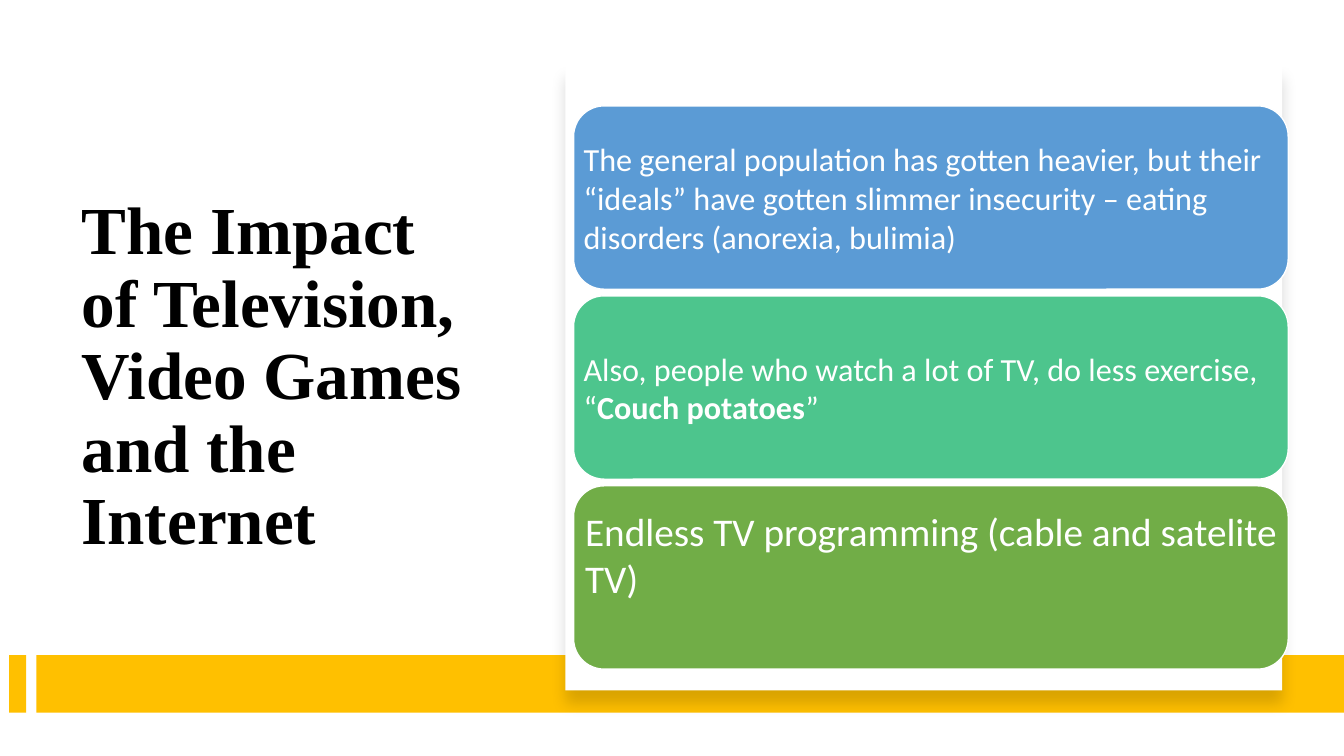
from lxml.etree import SubElement
from pptx import Presentation
from pptx.dml.color import RGBColor
from pptx.enum.shapes import MSO_SHAPE
from pptx.enum.text import MSO_ANCHOR, MSO_AUTO_SIZE, PP_ALIGN
from pptx.oxml.ns import qn
from pptx.util import Pt

BLACK = RGBColor(0x00, 0x00, 0x00)
WHITE = RGBColor(0xFF, 0xFF, 0xFF)
AMBER = RGBColor(0xFF, 0xC0, 0x00)
BLUE = RGBColor(0x5B, 0x9B, 0xD5)
TEAL = RGBColor(0x4D, 0xC5, 0x8D)
GREEN = RGBColor(0x71, 0xAD, 0x47)

BAR_TOP, BAR_HEIGHT = 468, 41
CARD_LEFT, CARD_TOP = 409.7, 75.6
CARD_WIDTH, CARD_HEIGHT = 510.5, 131
CARD_STEP = 135.7

# Fill, text size, side inset, bottom inset, runs of (text, bold)
CARDS = [
    (BLUE, 23, 0.8, 0.8, [
        ("The general population has gotten heavier, but their “ideals” have "
         "gotten slimmer insecurity – eating disorders (anorexia, bulimia)", False),
    ]),
    (TEAL, 23, 0.8, 0.8, [
        ("Also, people who watch a lot of TV, do less exercise, “", False),
        ("Couch potatoes", True),
        ("”", False),
    ]),
    (GREEN, 28, 1.9, 35.5, [
        ("Endless TV programming (cable and satelite TV)", False),
    ]),
]


def add_run(paragraph, text, font_name, size, color, bold):
    run = paragraph.add_run()
    run.text = text
    run.font.name = font_name
    run.font.size = Pt(size)
    run.font.color.rgb = color
    run.font.bold = bold


def add_title(slide, text):
    title = slide.shapes.title
    title.left, title.top = Pt(51), Pt(86.4)
    title.width, title.height = Pt(298.8), Pt(367.2)
    frame = title.text_frame
    frame.word_wrap = True
    frame.auto_size = MSO_AUTO_SIZE.NONE
    frame.vertical_anchor = MSO_ANCHOR.MIDDLE
    paragraph = frame.paragraphs[0]
    paragraph.alignment = PP_ALIGN.LEFT
    paragraph.line_spacing = 0.9
    add_run(paragraph, text, "Times New Roman", 48, BLACK, True)


def add_block(slide, kind, left, top, width, height, fill):
    """Add a filled shape without outline or shadow."""
    shape = slide.shapes.add_shape(kind, Pt(left), Pt(top), Pt(width), Pt(height))
    shape.shadow.inherit = False
    shape.fill.solid()
    shape.fill.fore_color.rgb = fill
    shape.line.fill.background()
    return shape


def add_soft_shadow(shape):
    effects = shape.element.spPr.find(qn("a:effectLst"))
    shadow = SubElement(effects, qn("a:outerShdw"), blurRad=str(Pt(11)),
                        dist=str(Pt(10)), dir="5400000", algn="t", rotWithShape="0")
    color = SubElement(shadow, qn("a:srgbClr"), val=str(BLACK))
    SubElement(color, qn("a:alpha"), val="15000")


def add_card(slide, top, fill, size, side_inset, bottom_inset, runs):
    card = add_block(slide, MSO_SHAPE.ROUNDED_RECTANGLE, CARD_LEFT, top,
                     CARD_WIDTH, CARD_HEIGHT, fill)
    card.line.color.rgb = WHITE
    card.line.width = Pt(1)
    frame = card.text_frame
    frame.word_wrap = True
    frame.vertical_anchor = MSO_ANCHOR.MIDDLE
    frame.margin_left = frame.margin_right = frame.margin_top = Pt(side_inset)
    frame.margin_bottom = Pt(bottom_inset)
    paragraph = frame.paragraphs[0]
    paragraph.alignment = PP_ALIGN.LEFT
    for text, bold in runs:
        add_run(paragraph, text, "Calibri", size, WHITE, bold)


def main():
    presentation = Presentation()
    presentation.slide_width, presentation.slide_height = Pt(960), Pt(540)
    slide = presentation.slides.add_slide(presentation.slide_layouts[5])
    add_title(slide, "The Impact of Television, Video Games and the Internet")
    for left, width in [(6.5, 12.2), (25.9, 934.1)]:
        add_block(slide, MSO_SHAPE.RECTANGLE, left, BAR_TOP, width, BAR_HEIGHT, AMBER)
    panel = add_block(slide, MSO_SHAPE.RECTANGLE, 403.9, 46.1, 511.9, 447.1, WHITE)
    add_soft_shadow(panel)
    for index, card in enumerate(CARDS):
        add_card(slide, CARD_TOP + index * CARD_STEP, *card)
    presentation.save("out.pptx")


if __name__ == "__main__":
    main()
